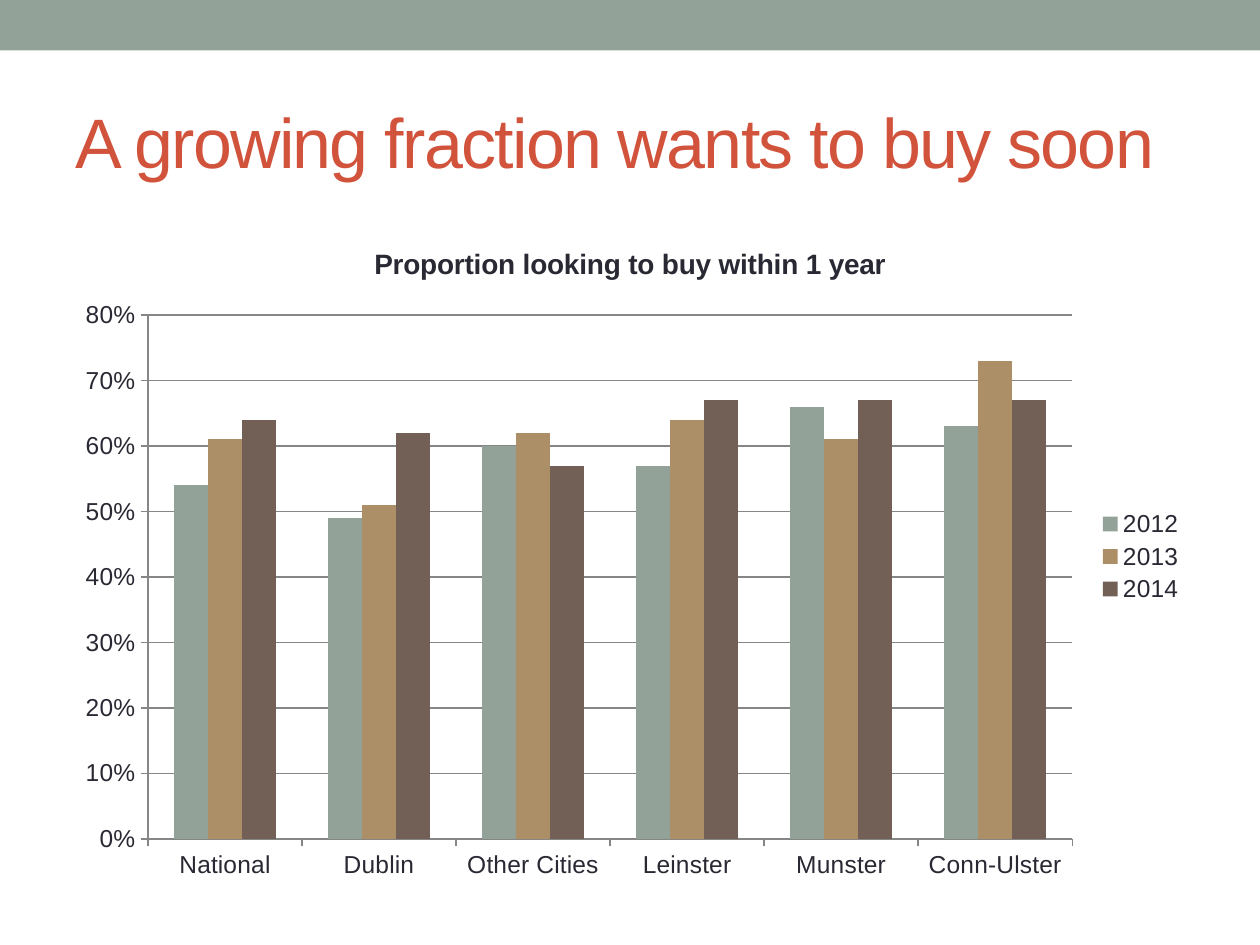
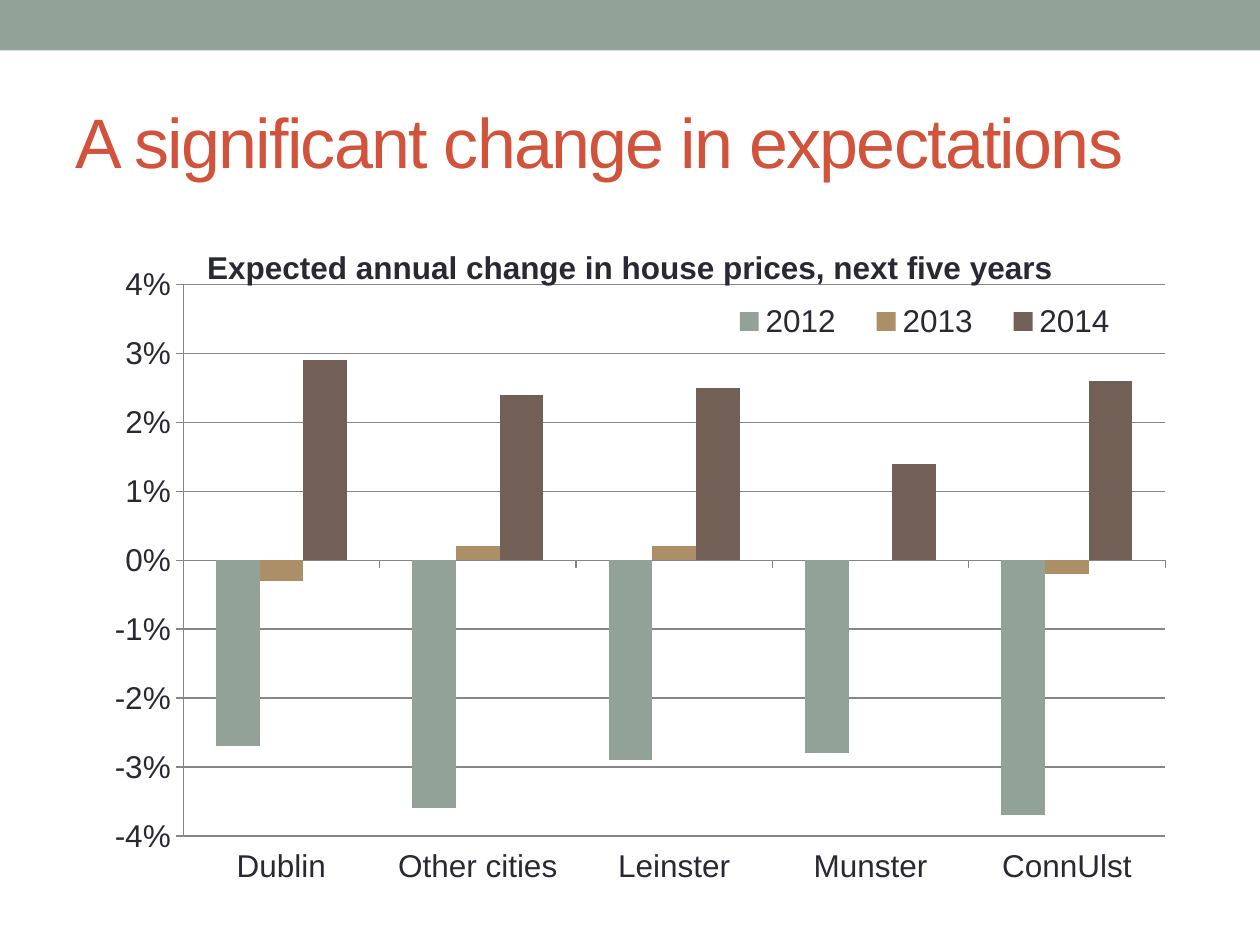
from dataclasses import dataclass
from typing import Optional

import pptx
import pptx.chart.data
import pptx.dml.color
import pptx.enum.chart
import pptx.enum.shapes
import pptx.enum.text
import pptx.oxml
import pptx.oxml.ns
import pptx.util

Cm = pptx.util.Cm
Pt = pptx.util.Pt
RGBColor = pptx.dml.color.RGBColor
qn = pptx.oxml.ns.qn

SAGE = RGBColor(0x93, 0xA2, 0x99)
TAN = RGBColor(0xAD, 0x8F, 0x67)
BROWN = RGBColor(0x72, 0x60, 0x56)
RUST = RGBColor(0xD2, 0x53, 0x3C)
INK = RGBColor(0x29, 0x29, 0x34)
GREY = RGBColor(0x86, 0x86, 0x86)

FONT = "Arial"
YEARS = {"2012": SAGE, "2013": TAN, "2014": BROWN}
WIDTH, HEIGHT = Cm(25.4), Cm(19.05)
LEFT, SPAN = Cm(1.27), Cm(22.86)


@dataclass(frozen=True)
class Frame:
    """A place inside a chart, in fractions of its size."""
    x: float
    y: float
    w: float
    h: float


@dataclass(frozen=True)
class Survey:
    title: str
    head: str
    head_size: int
    size: int
    areas: tuple[str, ...]
    rows: tuple[tuple[float, ...], ...]  # one row for each year
    low: float
    high: float
    step: float
    plot: Optional[Frame] = None
    key: Optional[Frame] = None


SURVEYS = (
    Survey(
        "A growing fraction wants to buy soon",
        "Proportion looking to buy within 1 year", 16, 14,
        ("National", "Dublin", "Other Cities", "Leinster", "Munster", "Conn-Ulster"),
        ((0.54, 0.49, 0.60, 0.57, 0.66, 0.63),
         (0.61, 0.51, 0.62, 0.64, 0.61, 0.73),
         (0.64, 0.62, 0.57, 0.67, 0.67, 0.67)),
        0, 0.8, 0.1,
    ),
    Survey(
        "A significant change in expectations",
        "Expected annual change in house prices, next five years", 18, 18,
        ("Dublin", "Other cities", "Leinster", "Munster", "ConnUlst"),
        ((-0.027, -0.036, -0.029, -0.028, -0.037),
         (-0.003, 0.002, 0.002, 0, -0.002),
         (0.029, 0.024, 0.025, 0.014, 0.026)),
        -0.04, 0.04, 0.01,
        plot=Frame(0.106, 0.095, 0.866, 0.821),
        key=Frame(0.57, 0.12, 0.38, 0.06),
    ),
)


def style(font, size: int, color: RGBColor, bold: bool = False) -> None:
    font.name, font.size, font.bold = FONT, Pt(size), bold
    font.color.rgb = color


def layout(frame: Frame, inner: bool = False):
    """Return the XML that fixes a chart part at a frame."""
    target = '<c:layoutTarget val="inner"/>' if inner else ""
    modes = "".join(f'<c:{side}Mode val="edge"/>' for side in "xy")
    sizes = "".join(f'<c:{side} val="{getattr(frame, side)}"/>' for side in "xywh")
    return pptx.oxml.parse_xml(
        f'<c:layout {pptx.oxml.ns.nsdecls("c")}><c:manualLayout>'
        f"{target}{modes}{sizes}</c:manualLayout></c:layout>")


def clear(part) -> None:
    """Drop the automatic layout of a chart part."""
    for item in part.findall(qn("c:layout")):
        part.remove(item)


def add_band(slide) -> None:
    """Draw the top band and hand it to the master, behind all else."""
    band = slide.shapes.add_shape(
        pptx.enum.shapes.MSO_SHAPE.RECTANGLE, 0, 0, WIDTH, Cm(1.02))
    band.shadow.inherit = False
    band.fill.solid()
    band.fill.fore_color.rgb = SAGE
    band.line.fill.background()
    tree = slide.slide_layout.slide_master.shapes.element
    tree.insert(2, band.element)


def set_title(slide, text: str) -> None:
    title = slide.shapes.title
    title.left, title.top, title.width, title.height = LEFT, Cm(1.47), SPAN, Cm(2.74)
    frame = title.text_frame
    frame.text = text
    frame.vertical_anchor = pptx.enum.text.MSO_ANCHOR.MIDDLE
    para = frame.paragraphs[0]
    para.alignment = pptx.enum.text.PP_ALIGN.LEFT
    style(para.font, 40, RUST)
    para.runs[0].font._element.set("spc", "-100")


def set_axes(chart, survey: Survey) -> None:
    values, areas = chart.value_axis, chart.category_axis
    values.minimum_scale, values.maximum_scale = survey.low, survey.high
    values.major_unit = survey.step
    values.has_major_gridlines = True
    values.tick_labels.number_format = "0%"
    values.tick_labels.number_format_is_linked = False
    areas.tick_label_position = pptx.enum.chart.XL_TICK_LABEL_POSITION.LOW
    for axis in (values, areas):
        axis.major_tick_mark = pptx.enum.chart.XL_TICK_MARK.OUTSIDE
        axis.minor_tick_mark = pptx.enum.chart.XL_TICK_MARK.NONE
    for part in (values, areas, values.major_gridlines):
        part.format.line.color.rgb = GREY
        part.format.line.width = Pt(0.75)


def set_key(chart, frame: Optional[Frame]) -> None:
    chart.has_legend = True
    key = chart.legend
    key.position = pptx.enum.chart.XL_LEGEND_POSITION.RIGHT
    key.include_in_layout = False
    if frame:
        part = key._element
        clear(part)
        part.find(qn("c:overlay")).addprevious(layout(frame))


def add_chart(slide, survey: Survey) -> None:
    data = pptx.chart.data.CategoryChartData(number_format="0%")
    data.categories = survey.areas
    for year, row in zip(YEARS, survey.rows):
        data.add_series(year, row)
    chart = slide.shapes.add_chart(
        pptx.enum.chart.XL_CHART_TYPE.COLUMN_CLUSTERED,
        LEFT, Cm(4.45), SPAN, Cm(13.54), data).chart
    style(chart.font, survey.size, INK)

    chart.has_title = True
    head = chart.chart_title.text_frame
    head.text = survey.head
    style(head.paragraphs[0].font, survey.head_size, INK, bold=True)

    bars = chart.plots[0]
    bars.gap_width, bars.overlap, bars.vary_by_categories = 150, 0, False
    for series, color in zip(bars.series, YEARS.values()):
        series.invert_if_negative = False
        series.format.fill.solid()
        series.format.fill.fore_color.rgb = color

    set_axes(chart, survey)
    set_key(chart, survey.key)
    if survey.plot:
        area = chart._chartSpace.chart.plotArea
        clear(area)
        area.insert(0, layout(survey.plot, inner=True))


def main() -> None:
    deck = pptx.Presentation()
    deck.slide_width, deck.slide_height = WIDTH, HEIGHT
    blank = deck.slide_layouts.get_by_name("Title Only")
    for survey in SURVEYS:
        slide = deck.slides.add_slide(blank)
        set_title(slide, survey.title)
        add_chart(slide, survey)
    add_band(deck.slides[0])
    deck.save("out.pptx")


if __name__ == "__main__":
    main()
